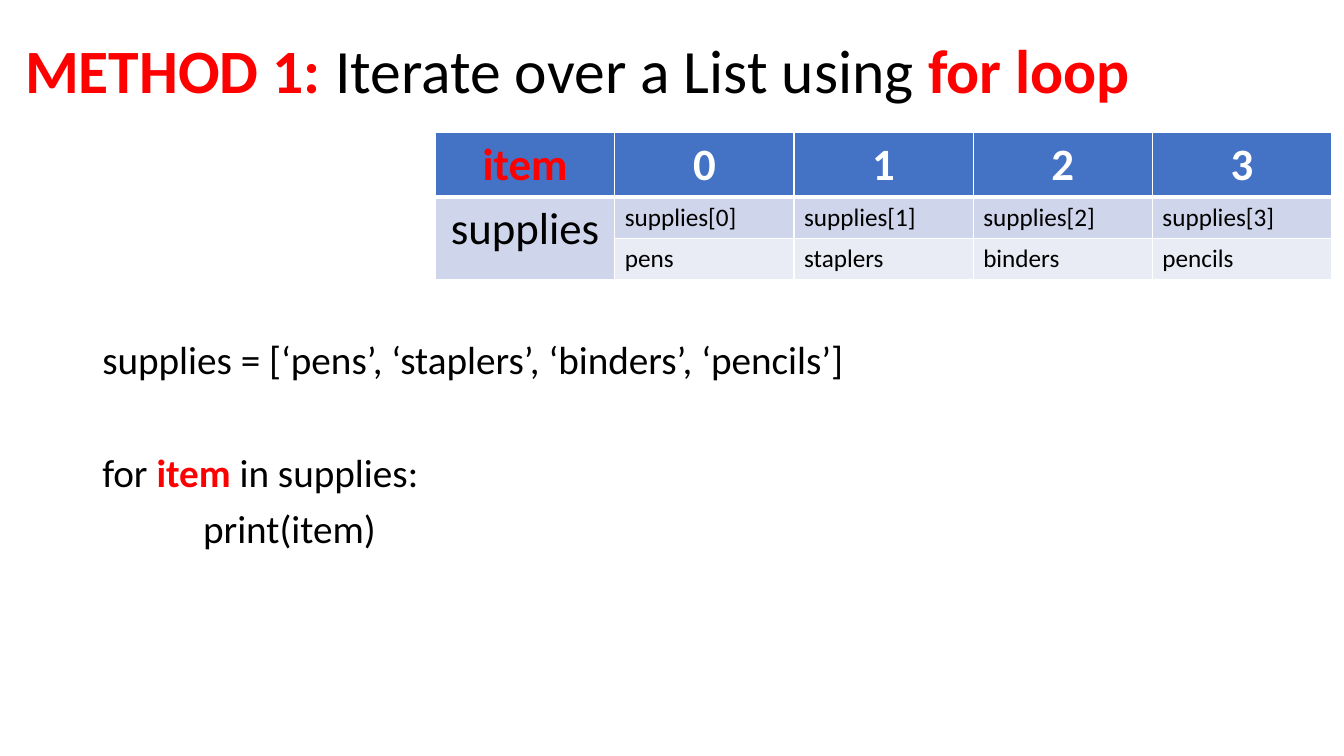
from dataclasses import dataclass

from lxml import etree
from pptx import Presentation
from pptx.dml.color import RGBColor
from pptx.enum.text import MSO_ANCHOR, PP_ALIGN
from pptx.oxml.ns import qn
from pptx.util import Emu, Inches, Pt

MIDDLE, TOP = MSO_ANCHOR.MIDDLE, MSO_ANCHOR.TOP
LEFT, CENTER = PP_ALIGN.LEFT, PP_ALIGN.CENTER
FONT = "Calibri"
RED, BLACK, WHITE = "FF0000", "000000", "FFFFFF"
BLUE, BAND_DARK, BAND_LIGHT = "4472C4", "CFD5EA", "E9EBF5"

# The slide is a grid of 160 columns by 90 rows
UNIT = Inches(1 / 12)
GRID_COLS, GRID_ROWS = 160, 90


@dataclass
class Span:
    text: str
    size: float
    color: str = BLACK
    bold: bool = False


@dataclass
class Line:
    spans: list[Span]
    before: float = 0
    indent: float = 0


@dataclass
class Box:
    left: float
    top: float
    width: float
    height: float

    def emu(self) -> list[Emu]:
        return [grid(n) for n in (self.left, self.top, self.width, self.height)]


def grid(n: float) -> Emu:
    return Emu(round(n * UNIT))


def rgb(color: str) -> RGBColor:
    return RGBColor.from_string(color)


def add_spans(p, spans: list[Span]) -> None:
    for span in spans:
        r = p.add_run()
        r.text = span.text
        formats = {"name": FONT, "size": Pt(span.size), "bold": span.bold}
        for name, value in formats.items():
            setattr(r.font, name, value)
        r.font.color.rgb = rgb(span.color)


def add_text(s, box: Box, lines: list[Line], anchor, inset_top: float = 0.6) -> None:
    tf = s.shapes.add_textbox(*box.emu()).text_frame
    formats = {"word_wrap": True, "vertical_anchor": anchor, "margin_top": grid(inset_top)}
    for name, value in formats.items():
        setattr(tf, name, value)
    for i, line in enumerate(lines):
        p = tf.add_paragraph() if i else tf.paragraphs[0]
        p.line_spacing = 0.9
        p.space_before = Pt(line.before)
        if line.indent:
            p._p.get_or_add_pPr().set("marL", str(grid(line.indent)))
        add_spans(p, line.spans)


def set_borders(cell, widths: dict[str, float]) -> None:
    tc_pr = cell._tc.get_or_add_tcPr()
    for i, (side, width) in enumerate(widths.items()):
        ln = etree.Element(qn(f"a:ln{side}"), w=str(Pt(width)))
        fill = etree.SubElement(ln, qn("a:solidFill"))
        etree.SubElement(fill, qn("a:srgbClr"), val=WHITE)
        tc_pr.insert(i, ln)


def fill_cell(cell, span: Span, fill: str, align, top: float, bottom: float) -> None:
    cell.fill.solid()
    cell.fill.fore_color.rgb = rgb(fill)
    set_borders(cell, {"L": 1, "R": 1, "T": top, "B": bottom})
    p = cell.text_frame.paragraphs[0]
    p.alignment = align
    add_spans(p, [span])


def add_supplies_table(s, box: Box, heights: list[float], supplies: list[str]) -> None:
    n_cols = len(supplies) + 1
    table = s.shapes.add_table(len(heights), n_cols, *box.emu()).table
    for column in table.columns:
        column.width = grid(box.width / n_cols)
    for row, height in zip(table.rows, heights):
        row.height = grid(height)

    # Label column
    table.cell(1, 0).merge(table.cell(2, 0))
    fill_cell(table.cell(0, 0), Span("item", 32, RED, True), BLUE, CENTER, 1, 3)
    fill_cell(table.cell(1, 0), Span("supplies", 32), BAND_DARK, CENTER, 3, 1)

    # One column per list element
    for i, name in enumerate(supplies):
        index, reference, value = (table.cell(row, i + 1) for row in range(3))
        fill_cell(index, Span(str(i), 32, WHITE, True), BLUE, CENTER, 1, 3)
        fill_cell(reference, Span(f"supplies[{i}]", 18), BAND_DARK, LEFT, 3, 1)
        fill_cell(value, Span(name, 18), BAND_LIGHT, LEFT, 1, 1)


def main() -> None:
    prs = Presentation()
    prs.slide_width, prs.slide_height = grid(GRID_COLS), grid(GRID_ROWS)
    s = prs.slides.add_slide(prs.slide_layouts[6])
    supplies = ["pens", "staplers", "binders", "pencils"]

    # Title
    title = [
        Span("METHOD 1:", 44, RED, True),
        Span(" Iterate over a List using ", 44),
        Span("for loop", 44, RED, True),
    ]
    add_text(s, Box(1.8, 0, 138, 17.4), [Line(title)], MIDDLE)

    # Code
    quoted = ", ".join(f"‘{name}’" for name in supplies)
    loop = [Span("for ", 28), Span("item", 28, RED, True), Span(" in supplies:", 28)]
    code = [
        Line([Span(f"supplies = [{quoted}]", 28)]),
        Line(loop, before=50.8),
        Line([Span("print(item)", 28)], before=10, indent=12),
    ]
    add_text(s, Box(11, 33.1, 138, 47.9), code, TOP, inset_top=7.4)

    # Table
    add_supplies_table(s, Box(51.85, 15.8, 106.7, 17.4), [7.65, 4.9, 4.9], supplies)

    prs.save("out.pptx")


if __name__ == "__main__":
    main()
